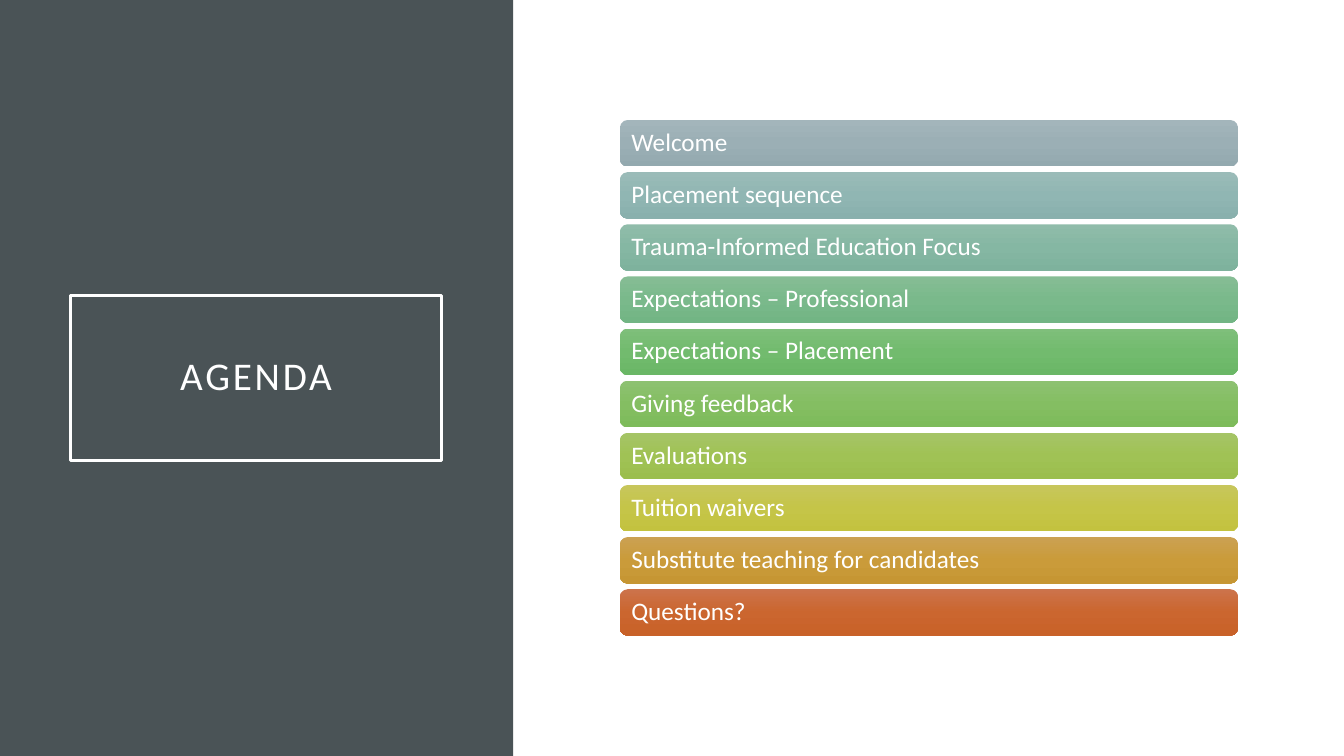
"""Build an agenda slide with a dark title panel and a list of coloured bars."""
from copy import deepcopy

from pptx import Presentation
from pptx.dml.color import RGBColor
from pptx.enum.shapes import MSO_SHAPE
from pptx.enum.text import MSO_ANCHOR, MSO_AUTO_SIZE, PP_ALIGN
from pptx.oxml.ns import qn
from pptx.util import Pt

FONT = "Calibri"
WHITE = RGBColor(0xFF, 0xFF, 0xFF)
SLATE = RGBColor(0x4A, 0x53, 0x56)

AGENDA = [
    ("Welcome", "A3B5BB", "9BAFB5", "93A9AF"),
    ("Placement sequence", "9ABBB8", "90B6B3", "89B0AD"),
    ("Trauma-Informed Education Focus", "90BCAA", "85B7A3", "7EB29D"),
    ("Expectations – Professional", "86BD95", "7AB98B", "72B584"),
    ("Expectations – Placement", "7FBF7B", "72BB6E", "6AB766"),
    ("Giving feedback", "8DC171", "84BE62", "7DBB5A"),
    ("Evaluations", "A5C466", "A0C255", "9BBE4D"),
    ("Tuition waivers", "C7C65C", "C5C548", "C3C23F"),
    ("Substitute teaching for candidates", "CBA152", "CA9B3A", "C69633"),
    ("Questions?", "CC734B", "CB662F", "C86128"),
]
BAR_LEFT, BAR_TOP = 442.8, 85.7
BAR_WIDTH, BAR_HEIGHT, BAR_PITCH = 441.5, 33.2, 37.24


def add_shape(page, kind, left, top, width, height):
    """Add a preset shape with no outline and no shadow."""
    box = page.shapes.add_shape(kind, Pt(left), Pt(top), Pt(width), Pt(height))
    box.shadow.inherit = False
    box.line.fill.background()
    return box


def write_text(box, text, size, align, inset):
    """Write one white paragraph, centred vertically in the box."""
    frame = box.text_frame
    frame.text = text
    frame.word_wrap = True
    frame.auto_size = MSO_AUTO_SIZE.NONE
    frame.vertical_anchor = MSO_ANCHOR.MIDDLE
    frame.margin_left = frame.margin_right = Pt(inset)
    frame.margin_top = frame.margin_bottom = Pt(inset)
    para = frame.paragraphs[0]
    para.alignment = align
    para.line_spacing = 0.9
    para.font.name = FONT
    para.font.size = Pt(size)
    para.font.color.rgb = WHITE
    return para


def fill_gradient(box, colours):
    """Fill the box from top to bottom with three evenly spaced colours."""
    box.fill.gradient()
    box.fill.gradient_angle = 270
    first = box.fill._xPr.find(".//" + qn("a:gs"))
    first.addnext(deepcopy(first))
    for stop, position, colour in zip(box.fill.gradient_stops, (0, 0.5, 1), colours):
        stop.position = position
        stop.color.rgb = RGBColor.from_string(colour)


def add_panel(page):
    """Add the dark panel behind the title."""
    panel = add_shape(page, MSO_SHAPE.RECTANGLE, 0, 0, 366.5, 540)
    panel.fill.solid()
    panel.fill.fore_color.rgb = SLATE


def frame_title(page, text):
    """Place the title in a white frame in front of the panel."""
    title = page.shapes.title
    title.left, title.top = Pt(50.4), Pt(211)
    title.width, title.height = Pt(265), Pt(118)
    title.line.color.rgb = WHITE
    title.line.width = Pt(2.5)
    para = write_text(title, text, 28, PP_ALIGN.CENTER, 14.4)
    para.runs[0].font._element.set("spc", "200")
    page.shapes._spTree.append(title._element)


def add_bar(page, index, text, colours):
    """Add one agenda bar at its place in the list."""
    top = BAR_TOP + index * BAR_PITCH
    bar = add_shape(page, MSO_SHAPE.ROUNDED_RECTANGLE, BAR_LEFT, top, BAR_WIDTH, BAR_HEIGHT)
    fill_gradient(bar, colours)
    write_text(bar, text, 18, PP_ALIGN.LEFT, 6.5)


def main():
    """Build and save the slide."""
    deck = Presentation()
    deck.slide_width, deck.slide_height = Pt(960), Pt(540)
    page = deck.slides.add_slide(deck.slide_layouts[5])
    add_panel(page)
    frame_title(page, "AGENDA")
    for index, (text, *colours) in enumerate(AGENDA):
        add_bar(page, index, text, colours)
    deck.save("out.pptx")


if __name__ == "__main__":
    main()
